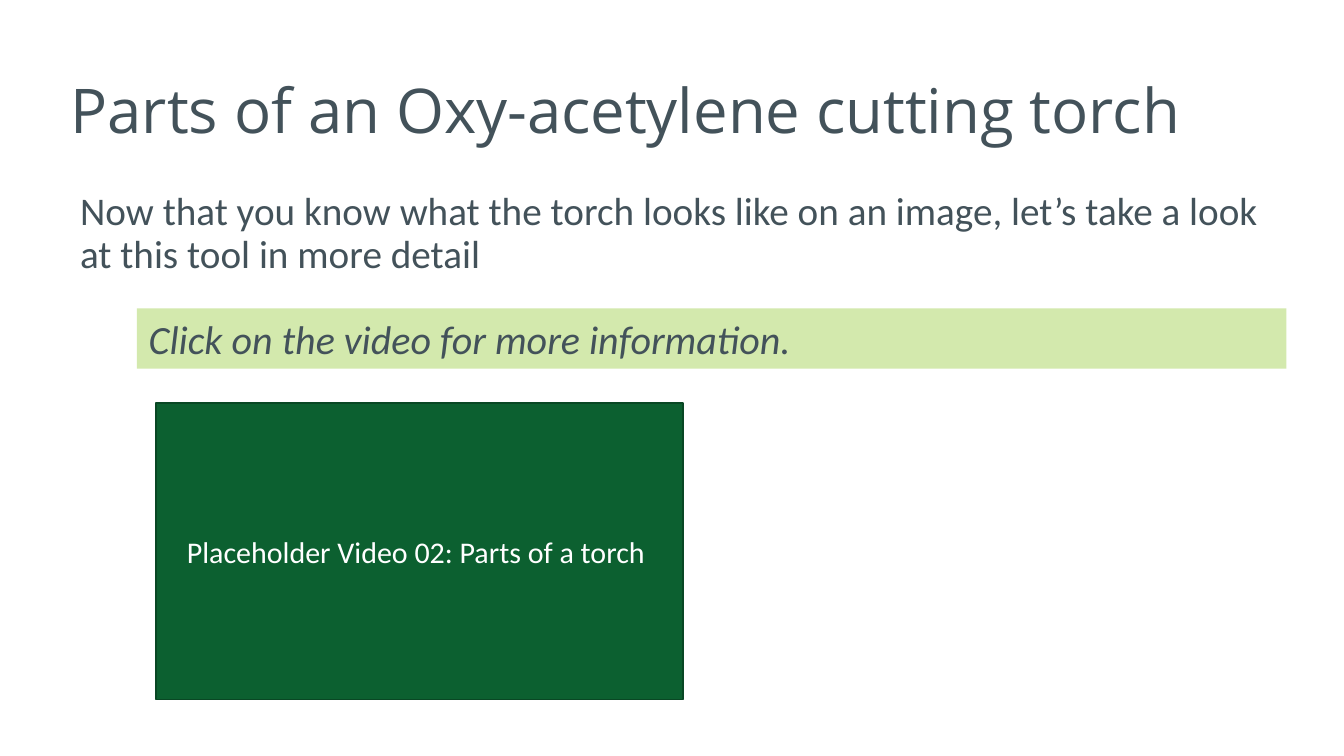
from pptx import Presentation
from pptx.dml.color import RGBColor
from pptx.enum.shapes import MSO_SHAPE as Shape
from pptx.enum.text import MSO_ANCHOR as Anchor, PP_ALIGN as Align
from pptx.util import Pt

SLATE = RGBColor(0x43, 0x52, 0x5A)
LIME = RGBColor(0xD3, 0xE9, 0xAD)
GREEN = RGBColor(0x0C, 0x60, 0x30)
EDGE = RGBColor(0x09, 0x47, 0x24)
WHITE = RGBColor(0xFF, 0xFF, 0xFF)


class Deck:
    def __init__(self, width, height):
        self.file = Presentation()
        self.file.slide_width, self.file.slide_height = Pt(width), Pt(height)
        self.slide = self.file.slides.add_slide(self.file.slide_layouts[6])
        self.font = {"name": "Calibri", "italic": False}

    def label(self, shape, words, size, color=SLATE, anchor=Anchor.TOP,
              para=None, **font):
        """Fill a shape with one paragraph in the deck's style."""
        frame = shape.text_frame
        frame.word_wrap = True
        frame.vertical_anchor = anchor
        line = frame.paragraphs[0]
        for key, value in {"alignment": Align.LEFT, **(para or {})}.items():
            setattr(line, key, value)
        run = line.add_run()
        run.text = words
        for key, value in {**self.font, "size": Pt(size), **font}.items():
            setattr(run.font, key, value)
        run.font.color.rgb = color

    def text(self, box, words, size, **style):
        shape = self.slide.shapes.add_textbox(*map(Pt, box))
        self.label(shape, words, size, **style)

    def panel(self, box, fill, words, size, edge=None, **style):
        shape = self.slide.shapes.add_shape(Shape.RECTANGLE, *map(Pt, box))
        shape.shadow.inherit = False
        shape.fill.solid()
        shape.fill.fore_color.rgb = fill
        if edge is None:
            shape.line.fill.background()
        else:
            shape.line.color.rgb = edge
            shape.line.width = Pt(1)
        self.label(shape, words, size, **style)


def main():
    deck = Deck(806.4, 453.6)
    deck.text((35.3, 24.5, 695.5, 87.8),
              "Parts of an Oxy-acetylene cutting torch", 37,
              anchor=Anchor.MIDDLE, para={"line_spacing": 0.9},
              name="Open Sans")
    deck.text((41, 111.6, 725, 74.2),
              "Now that you know what the torch looks like on an image, "
              "let’s take a look at this tool in more detail", 23.5,
              para={"line_spacing": 0.9, "space_before": Pt(8.4)})
    deck.panel((82.1, 185, 689.8, 36.2), LIME,
               "Click on the video for more information.", 24, italic=True)
    deck.panel((93.6, 241.9, 316.1, 177.8), GREEN,
               "Placeholder Video 02: Parts of a torch ", 18, edge=EDGE,
               color=WHITE, anchor=Anchor.MIDDLE,
               para={"alignment": Align.CENTER})
    deck.file.save("out.pptx")


if __name__ == "__main__":
    main()
